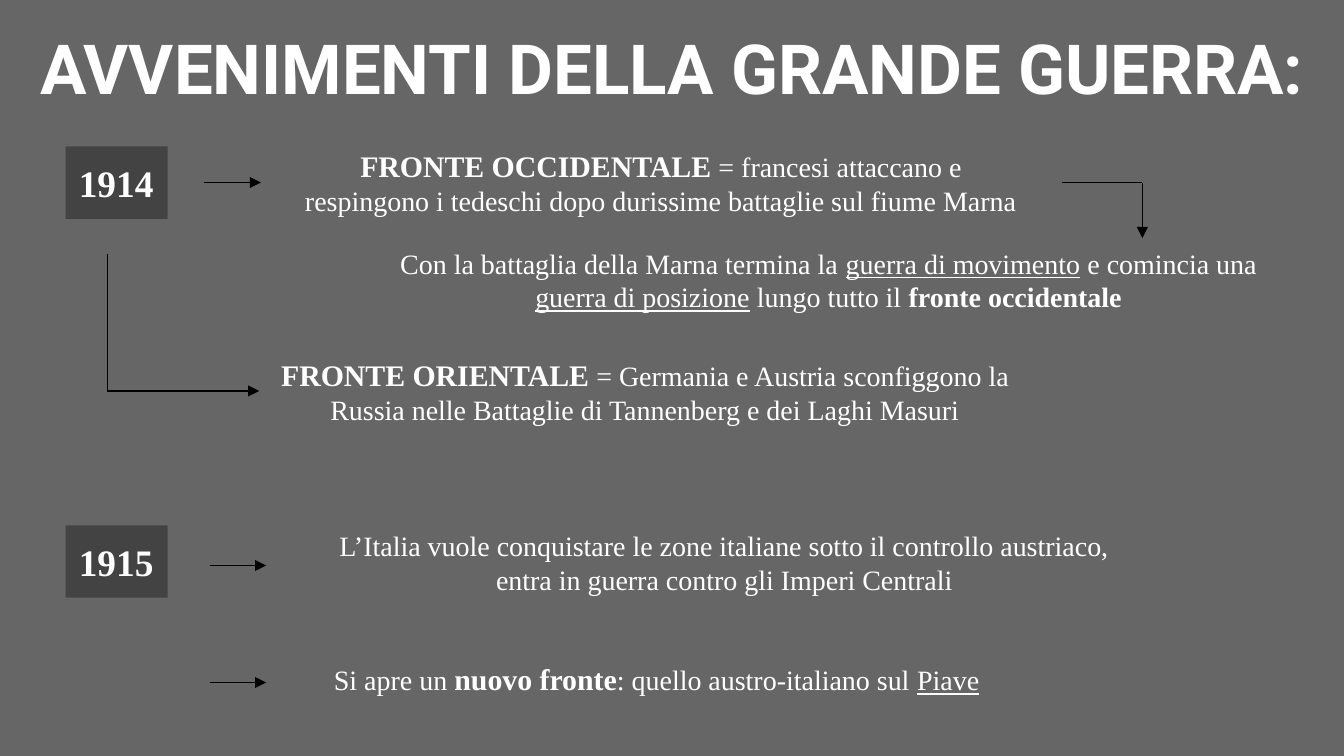
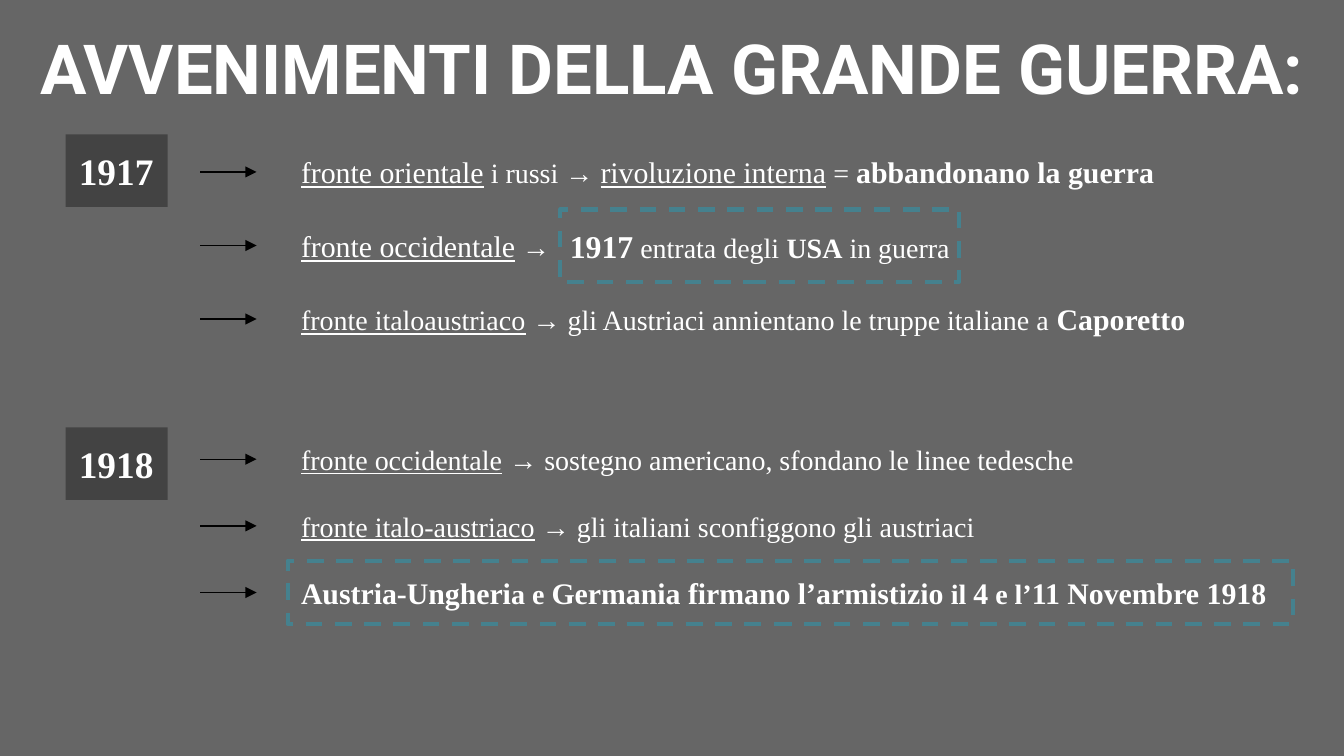
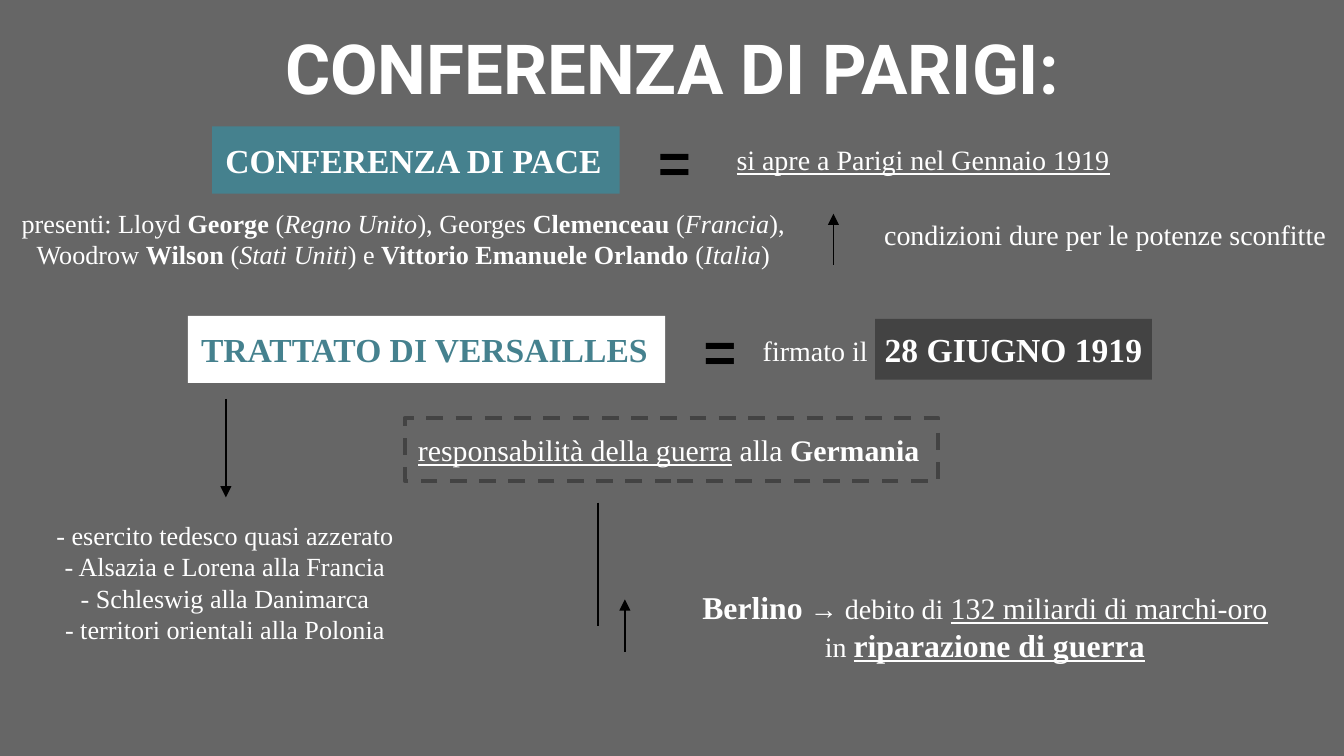
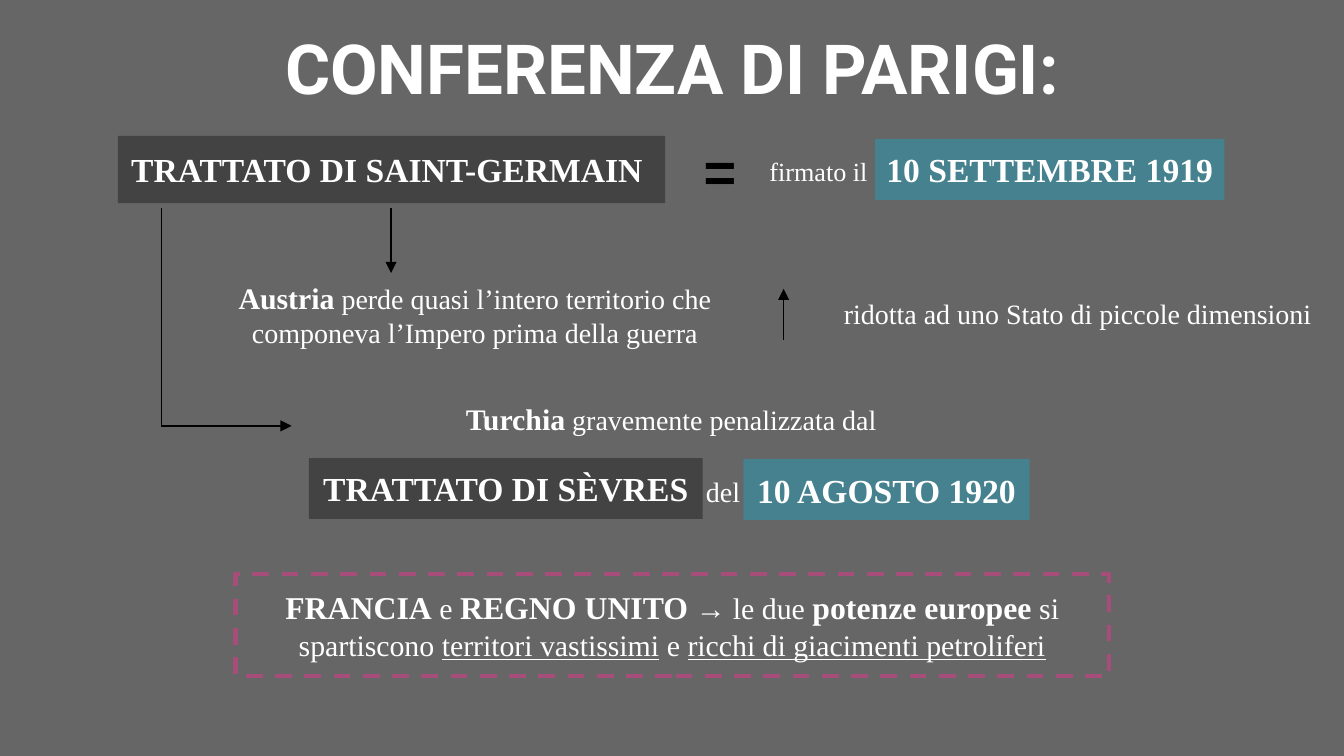
from dataclasses import dataclass
from typing import Any, Optional

from lxml.etree import SubElement
from pptx import Presentation
from pptx.dml.color import RGBColor
from pptx.enum.dml import MSO_LINE
from pptx.enum.shapes import MSO_CONNECTOR, MSO_SHAPE
from pptx.enum.text import MSO_ANCHOR, MSO_AUTO_SIZE, PP_ALIGN
from pptx.oxml.ns import qn
from pptx.util import Cm, Pt

# Shared look
GRAY = RGBColor(0x66, 0x66, 0x66)
DARK = RGBColor(0x43, 0x43, 0x43)
TEAL = RGBColor(0x45, 0x81, 0x8E)
MAGENTA = RGBColor(0xA6, 0x4D, 0x79)
WHITE = RGBColor(0xFF, 0xFF, 0xFF)
BLACK = RGBColor(0x00, 0x00, 0x00)
TITLE_FONT = "Roboto"
BODY_FONT = "Times New Roman"
SIGN_FONT = "Arial"
LEFT, CENTER, RIGHT = PP_ALIGN.LEFT, PP_ALIGN.CENTER, PP_ALIGN.RIGHT
TITLE_ONLY, TITLE_AND_BODY = 5, 1


@dataclass
class Run:
    text: str
    size: Optional[int] = None
    bold: bool = False
    underline: bool = False
    italic: bool = False


def bold(text, size=None, underline=False):
    return Run(text, size, bold=True, underline=underline)


def under(text, size=None):
    return Run(text, size, underline=True)


def italic(text):
    return Run(text, italic=True)


def write_text(shape, *paragraphs, size=15, font=BODY_FONT, color=WHITE,
               align=LEFT, inset=0.25):
    """Fill a shape; each paragraph is a list of strings and runs."""
    frame = shape.text_frame
    frame.word_wrap = True
    frame.auto_size = MSO_AUTO_SIZE.NONE
    frame.vertical_anchor = MSO_ANCHOR.MIDDLE
    frame.margin_left = frame.margin_right = Cm(inset)
    frame.margin_top = frame.margin_bottom = Cm(0)
    for index, parts in enumerate(paragraphs):
        paragraph = frame.add_paragraph() if index else frame.paragraphs[0]
        paragraph.alignment = align
        paragraph.space_before = Pt(0)
        for part in parts:
            style = Run(part) if isinstance(part, str) else part
            run = paragraph.add_run()
            run.text = style.text
            run.font.name = font
            run.font.size = Pt(style.size or size)
            run.font.color.rgb = color
            run.font.bold = style.bold
            run.font.underline = style.underline
            run.font.italic = style.italic


def move(shape, left, top, width, height):
    shape.left, shape.top = Cm(left), Cm(top)
    shape.width, shape.height = Cm(width), Cm(height)


@dataclass
class Region:
    """Part of a slide whose contents are placed from its left and top, in cm."""
    slide: Any
    left: float
    top: float

    def text(self, left, top, width, height, *paragraphs, **text_format):
        shape = self.slide.shapes.add_textbox(
            Cm(self.left + left), Cm(self.top + top), Cm(width), Cm(height))
        write_text(shape, *paragraphs, **text_format)

    def box(self, left, top, width, height, *paragraphs, fill=None,
            outline=None, **text_format):
        shape = self.slide.shapes.add_shape(
            MSO_SHAPE.RECTANGLE, Cm(self.left + left), Cm(self.top + top),
            Cm(width), Cm(height))
        shape.shadow.inherit = False
        if fill is None:
            shape.fill.background()
        else:
            shape.fill.solid()
            shape.fill.fore_color.rgb = fill
        if outline is None:
            shape.line.fill.background()
        else:
            shape.line.color.rgb = outline
            shape.line.width = Pt(2.25)
            shape.line.dash_style = MSO_LINE.DASH
        write_text(shape, *paragraphs, **text_format)

    def route(self, *points, arrow=True):
        """Join the points with straight lines, the last one with an arrowhead."""
        for start, end in zip(points, points[1:]):
            connector = self.slide.shapes.add_connector(
                MSO_CONNECTOR.STRAIGHT,
                Cm(self.left + start[0]), Cm(self.top + start[1]),
                Cm(self.left + end[0]), Cm(self.top + end[1]))
            connector.line.color.rgb = BLACK
            connector.line.width = Pt(0.75)
            if arrow and end == points[-1]:
                SubElement(connector.line._get_or_add_ln(), qn("a:tailEnd"),
                           type="triangle")
            SubElement(connector._element.spPr, qn("a:effectLst"))


def add_titled_slide(presentation, title, layout=TITLE_ONLY):
    slide = presentation.slides.add_slide(presentation.slide_layouts[layout])
    move(slide.shapes.title, 0, 0.23, 25.4, 2.08)
    write_text(slide.shapes.title, [bold(title)], size=37, font=TITLE_FONT,
               align=CENTER)
    return slide


# Pieces used in several regions
def add_year(region, top, year):
    region.box(0, top, 1.93, 1.37, [bold(year)], size=20, fill=DARK)


def add_heading(region, left, width, name, fill, color=WHITE):
    """Named box followed by an equals sign."""
    region.box(left, 0, width, 1.27, [bold(name)], size=18, fill=fill,
               color=color)
    region.text(left + width + 0.48, -0.25, 1.3, 1.8, [bold("=")], size=30,
                font=SIGN_FONT, color=BLACK)


def add_date(region, left, top, width, date, fill):
    region.box(left, top, width, 1.15, [bold(date)], size=18, fill=fill,
               align=CENTER, inset=0.1)


def add_treaty(region, width, name, date, date_width, fill, date_fill,
               color=WHITE, label_size=15):
    add_heading(region, 12.57 - width, width, name, fill, color)
    region.text(14, 0.06, 2.5, 1.2, ["firmato il"], size=label_size,
                align=RIGHT, inset=0.1)
    add_date(region, 16.54, 0.06, date_width, date, date_fill)


# Slide 1: years 1914 and 1915
def add_1914(region):
    add_year(region, 0.23, "1914")
    region.route((2.62, 0.91), (3.69, 0.91))
    region.text(4.22, 0, 14.07, 1.83,
                [bold("FRONTE OCCIDENTALE", 16),
                 " = francesi attaccano e respingono i tedeschi dopo "
                 "durissime battaglie sul fiume Marna"], align=CENTER)
    region.route((18.83, 0.91), (20.35, 0.91), (20.35, 1.96))
    region.text(5.95, 1.85, 16.94, 1.8,
                ["Con la battaglia della Marna termina la ",
                 under("guerra di movimento"), " e comincia una ",
                 under("guerra di posizione"), " lungo tutto il ",
                 bold("fronte occidentale")], align=CENTER)
    region.route((0.79, 2.26), (0.79, 4.85), (3.66, 4.85))
    region.text(3.69, 3.94, 14.53, 1.83,
                [bold("FRONTE ORIENTALE", 16),
                 " = Germania e Austria sconfiggono la Russia nelle "
                 "Battaglie di Tannenberg e dei Laghi Masuri"], align=CENTER)


def add_1915(region):
    add_year(region, 0.2, "1915")
    for middle in (0.96, 3.17):
        region.route((2.72, middle), (3.79, middle))
    region.text(4.58, 0, 15.75, 1.8,
                ["L’Italia vuole conquistare le zone italiane sotto il "
                 "controllo austriaco, entra in guerra contro gli Imperi "
                 "Centrali"], align=CENTER)
    region.text(4.58, 2.51, 13.18, 1.19,
                ["Si apre un ", bold("nuovo fronte", 16),
                 ": quello austro-italiano sul ", under("Piave")],
                align=CENTER)


# Slide 2: one row for each front
def add_fronts(region, year, first, step, rows):
    add_year(region, 0, year)
    for index, (width, outline, parts) in enumerate(rows):
        middle = first + index * step
        region.route((2.54, middle), (3.61, middle))
        place = (4.2, middle - 0.6, width, 1.2)
        if outline is None:
            region.text(*place, parts)
        else:
            region.box(*place, parts, outline=outline)


def add_1917(region):
    add_fronts(region, "1917", 0.71, 1.39, [
        (16.99, None, [under("fronte orientale", 16), " i russi → ",
                       under("rivoluzione interna", 16), " = ",
                       bold("abbandonano la guerra", 16)]),
        (5.6, None, [under("fronte occidentale", 16), " →"]),
        (17.35, None, [under("fronte italoaustriaco"),
                       " → gli Austriaci annientano le truppe italiane a ",
                       bold("Caporetto", 16)]),
    ])
    region.box(9.35, 1.42, 7.54, 1.37,
               [bold("1917", 17), " entrata degli ", bold("USA"),
                " in guerra"], outline=TEAL, align=CENTER, inset=0.1)


def add_1918(region):
    add_fronts(region, "1918", 0.6, 1.26, [
        (18.8, None, [under("fronte occidentale"),
                      " → sostegno americano, sfondano le linee tedesche"]),
        (17.98, None, [under("fronte italo-austriaco"),
                       " → gli italiani sconfiggono gli austriaci"]),
        (19, TEAL, [bold("Austria-Ungheri", 16), bold("a e "),
                    bold("Germania firmano l’armistizio", 16), bold(" il "),
                    bold("4", 16), bold(" e l’"),
                    bold("11 Novembre 1918", 16)]),
    ])


# Slide 3: peace conference and Versailles
def add_peace_conference(region):
    add_heading(region, 4.01, 7.7, "CONFERENZA DI PACE", TEAL)
    region.text(13.67, 0.06, 7.7, 1.14,
                [under("si apre a Parigi nel Gennaio 1919")])
    region.text(0, 1.27, 15.24, 1.7,
                ["presenti: Lloyd ", bold("George"), " (",
                 italic("Regno Unito"), "), Georges ", bold("Clemenceau"),
                 " (", italic("Francia"), "),"],
                ["Woodrow ", bold("Wilson"), " (", italic("Stati Uniti"),
                 ") e ", bold("Vittorio Emanuele Orlando"), " (",
                 italic("Italia"), ")"], size=14, align=CENTER)
    region.route((15.75, 2.61), (15.75, 1.65))
    region.text(16.38, 1.47, 9.02, 1.14,
                ["condizioni dure per le potenze sconfitte"], align=CENTER)


def add_versailles(region):
    add_treaty(region, 9.02, "TRATTATO DI VERSAILLES", "28 GIUGNO 1919", 5.23,
               fill=WHITE, date_fill=DARK, color=TEAL)
    region.route((4.27, 1.57), (4.27, 3.43))
    region.box(7.65, 1.93, 10.08, 1.19,
               [under("responsabilità della guerra"), " alla ",
                bold("Germania")], size=16, outline=DARK)
    region.route((11.3, 3.53), (11.3, 5.87), arrow=False)
    region.route((11.81, 6.35), (11.81, 5.36))
    region.text(12.57, 4.88, 12.09, 1.96,
                [bold("Berlino", 17), " → debito di ",
                 under("132 miliardi di marchi-oro", 16)],
                ["in ", bold("riparazione di guerra", 17, underline=True)],
                align=CENTER)
    # Terms of the treaty
    body = region.slide.placeholders[1]
    move(body, region.left + 0.76, region.top + 3.58, 6.99, 2.9)
    for paragraph_index in range(4):
        if paragraph_index:
            body.text_frame.add_paragraph()
    terms = ["- esercito tedesco quasi azzerato",
             "- Alsazia e Lorena alla Francia",
             "- Schleswig alla Danimarca",
             "- territori orientali alla Polonia"]
    body.text_frame.clear()
    write_text(body, *[[term] for term in terms], size=14, align=CENTER)
    for paragraph in body.text_frame.paragraphs:
        properties = paragraph._p.get_or_add_pPr()
        properties.set("marL", "0")
        properties.set("indent", "0")
        SubElement(properties, qn("a:buNone"))


# Slide 4: Saint-Germain, Sèvres and the winners
def add_saint_germain(region):
    add_treaty(region, 10.34, "TRATTATO DI SAINT-GERMAIN",
               "10 SETTEMBRE 1919", 6.6, fill=DARK, date_fill=TEAL,
               label_size=14)
    region.route((7.39, 1.37), (7.39, 2.59))
    region.route((3.05, 1.37), (3.05, 5.48), (5.51, 5.48))
    region.text(4.04, 2.46, 9.88, 1.83,
                [bold("Austria", 16),
                 " perde quasi l’intero territorio che componeva l’Impero "
                 "prima della guerra"], align=CENTER)
    region.route((14.81, 3.86), (14.81, 2.89))
    region.text(15.7, 2.79, 9.5, 1.14,
                ["ridotta ad uno Stato di piccole dimensioni"])


def add_sevres(region):
    region.text(0, 0, 15.98, 1.25,
                [bold("Turchia", 16), " gravemente penalizzata dal"],
                align=CENTER)
    add_date(region, 1.14, 1.37, 7.44, "TRATTATO DI SÈVRES", DARK)
    region.text(8.58, 1.42, 0.77, 1.15, ["del"], align=CENTER, inset=0)
    add_date(region, 9.35, 1.39, 5.41, "10 AGOSTO 1920", TEAL)


def add_winners(region):
    region.box(0, 0, 16.51, 1.93,
               [bold("FRANCIA", 17), " e ", bold("REGNO UNITO", 17),
                " → le due ", bold("potenze europee", 17), " si spartiscono ",
                under("territori vastissimi"), " e ",
                under("ricchi di giacimenti petroliferi")],
               size=16, outline=MAGENTA, align=CENTER)


def main():
    presentation = Presentation()
    presentation.slide_width, presentation.slide_height = Cm(25.4), Cm(14.29)
    background = presentation.slide_master.background.fill
    background.solid()
    background.fore_color.rgb = GRAY

    events, conference = "AVVENIMENTI DELLA GRANDE GUERRA:", "CONFERENZA DI PARIGI:"
    slides = [
        (events, TITLE_ONLY, [(add_1914, 1.24, 2.54), (add_1915, 1.24, 9.73)]),
        (events, TITLE_ONLY, [(add_1917, 1.24, 2.54), (add_1918, 1.24, 8.08)]),
        (conference, TITLE_AND_BODY, [(add_peace_conference, 0, 2.39),
                                      (add_versailles, 0, 5.97)]),
        (conference, TITLE_ONLY, [(add_saint_germain, 0, 2.57),
                                  (add_sevres, 4.7, 7.29),
                                  (add_winners, 4.45, 10.85)]),
    ]
    for title, layout, regions in slides:
        slide = add_titled_slide(presentation, title, layout)
        for add_region, left, top in regions:
            add_region(Region(slide, left, top))
    presentation.save("out.pptx")


if __name__ == "__main__":
    main()
